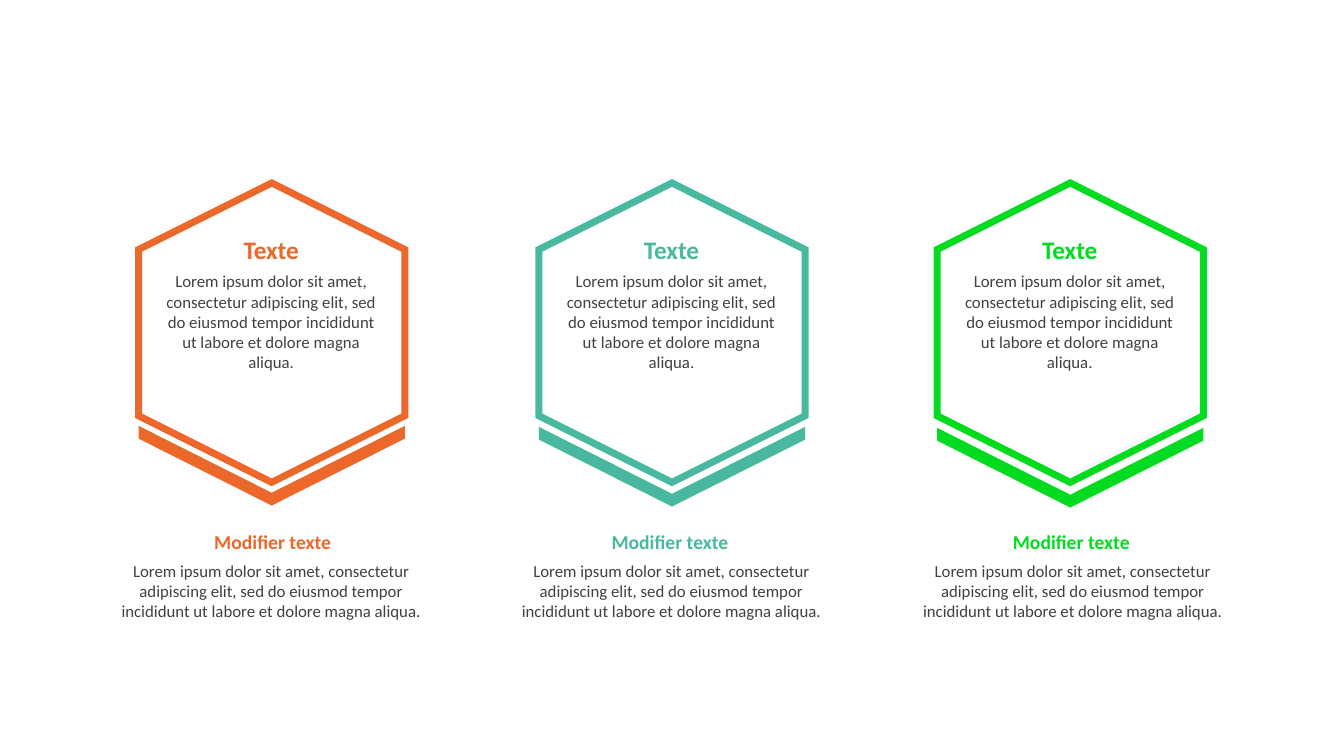
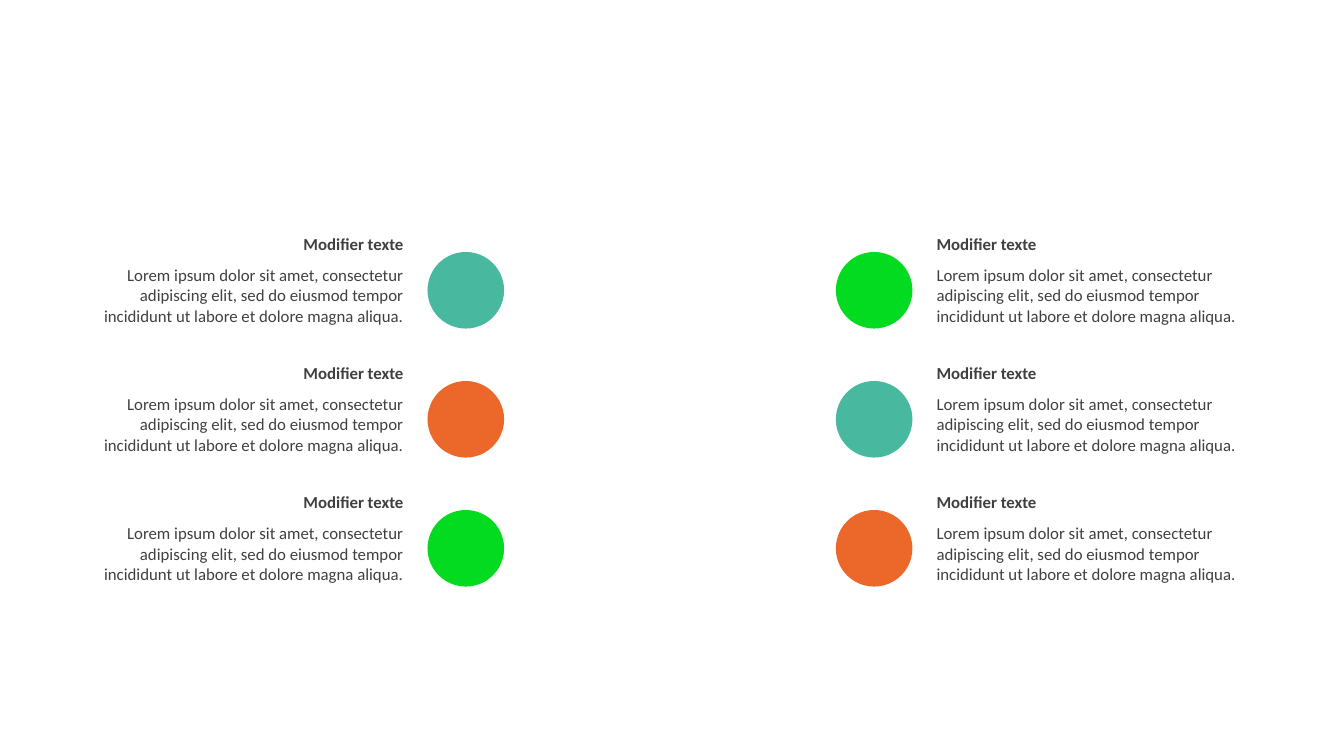
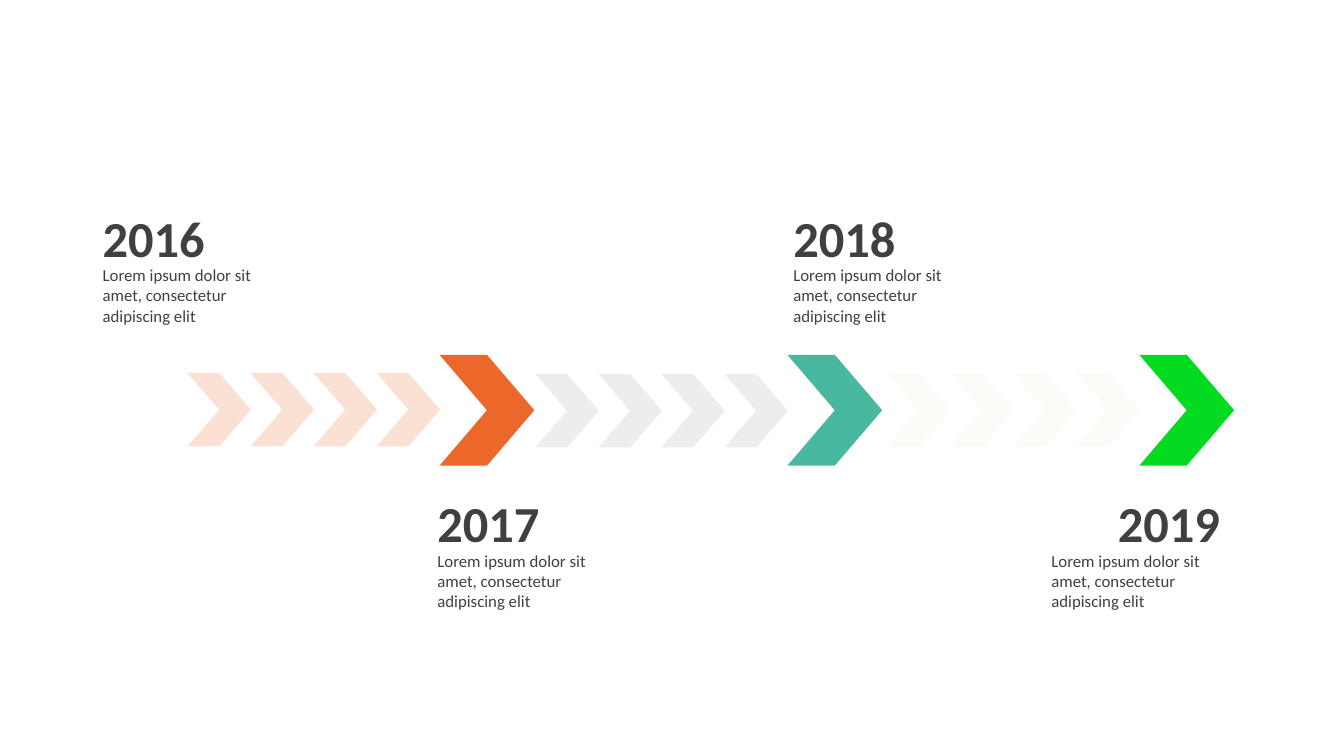
from dataclasses import dataclass
from lxml import etree
from pptx import Presentation
from pptx.dml import color
from pptx.enum import shapes, text
from pptx.oxml import ns
from pptx.util import Inches, Pt


@dataclass(frozen=True)
class Theme:
    font: str = "Calibri"
    ink: str = "404040"
    orange: str = "EC672A"
    teal: str = "48B89E"
    green: str = "03DB21"
    grey: str = "EDEDED"
    pale: str = "E2F0D9"
    body: int = 12
    label: int = 14
    head: int = 18
    year: int = 36
    stroke: int = 5


THEME = Theme()
KIND = shapes.MSO_SHAPE
LEFT, MID, RIGHT = text.PP_ALIGN.LEFT, text.PP_ALIGN.CENTER, text.PP_ALIGN.RIGHT
SHORT = "Lorem ipsum dolor sit amet, consectetur adipiscing elit"
LONG = SHORT + ", sed do eiusmod tempor incididunt ut labore et dolore magna aliqua."
LABEL = "Modifier texte"


def rgb(tone):
    return color.RGBColor.from_string(tone)


def add_text(slide, box, words, size=THEME.body, tone=THEME.ink,
             bold=False, align=LEFT, anchor=text.MSO_ANCHOR.TOP):
    frame = slide.shapes.add_textbox(*map(Inches, box)).text_frame
    frame.word_wrap = True
    frame.auto_size = text.MSO_AUTO_SIZE.SHAPE_TO_FIT_TEXT
    frame.vertical_anchor = anchor
    para = frame.paragraphs[0]
    para.text = words
    para.alignment = align
    font = para.font
    font.name, font.size, font.bold = THEME.font, Pt(size), bold
    font.color.rgb = rgb(tone)


def add_form(slide, kind, box, turn=0):
    form = slide.shapes.add_shape(kind, *map(Inches, box))
    form.shadow.inherit = False
    form.rotation = turn
    return form


def add_solid(slide, kind, box, tone, turn=0, alpha=100):
    form = add_form(slide, kind, box, turn)
    form.line.fill.background()
    form.fill.solid()
    form.fill.fore_color.rgb = rgb(tone)
    if alpha < 100:
        node = form.fill._xPr.find(".//" + ns.qn("a:srgbClr"))
        etree.SubElement(node, ns.qn("a:alpha"), val=str(alpha * 1000))
    return form


def add_frame(slide, box, tone):
    form = add_form(slide, KIND.HEXAGON, box, 270)
    form.fill.background()
    form.line.color.rgb = rgb(tone)
    form.line.width = Pt(THEME.stroke)
    etree.SubElement(form.line._ln, ns.qn("a:miter"), lim="800000")


def add_badge(slide, left, tone, lift):
    add_frame(slide, (left, 1.98, 2.97, 2.64), tone)
    add_text(slide, (left + 0.34, 2.64, 2.28, 1.11), LONG, align=MID)
    add_text(slide, (left + 0.34, 2.28, 2.28, 0.4), "Texte",
             THEME.head, tone, True, MID)
    fold = add_solid(slide, KIND.CHEVRON, (left + 1.09, lift, 0.79, 2.64), tone, 90)
    fold.adjustments[0] = 0.84


def add_note(slide, left, head, tone):
    add_text(slide, (left, 5.51, 3.48, 0.71), LONG, align=MID)
    add_text(slide, (head, 5.21, 3.45, 0.34), LABEL, THEME.label, tone, True, MID)


def add_point(slide, top, dot, left, width, tone, align):
    add_solid(slide, KIND.OVAL, (dot, top, 0.76, 0.76), tone)
    add_text(slide, (left, top + 0.08, width, 0.71), LONG, align=align)
    add_text(slide, (left, top - 0.23, width, 0.3), LABEL, bold=True, align=align)


def add_trail(slide, left, top, tone, alpha, tip):
    for step in range(4):
        box = (left + step * 0.625, top, 0.63, 0.73)
        add_solid(slide, KIND.CHEVRON, box, tone, alpha=alpha)
    add_solid(slide, KIND.CHEVRON, (left + 2.5, 3.52, 0.94, 1.1), tip)


def add_year(slide, left, top, year, align):
    add_text(slide, (left, top, 1.87, 0.71), year, THEME.year, bold=True,
             align=align, anchor=text.MSO_ANCHOR.MIDDLE)
    add_text(slide, (left, top + 0.58, 1.87, 0.71), SHORT)


def draw_badges(slide):
    for left, lift, note, head, tone in (
        (1.21, 3.3, 0.95, 0.98, THEME.orange),
        (5.18, 3.31, 4.92, 4.92, THEME.teal),
        (9.13, 3.32, 8.9, 8.9, THEME.green),
    ):
        add_badge(slide, left, tone, lift)
        add_note(slide, note, head, tone)


def draw_points(slide):
    tones = (THEME.green, THEME.teal, THEME.orange)
    for row in range(3):
        top = 2.5 + row * 1.28
        add_point(slide, top, 4.24, 0.69, 3.41, tones[(row + 1) % 3], RIGHT)
        add_point(slide, top, 8.29, 9.19, 3.45, tones[row], LEFT)


def draw_years(slide):
    add_trail(slide, 1.86, 3.7, THEME.orange, 20, THEME.orange)
    add_trail(slide, 5.31, 3.71, THEME.grey, 100, THEME.teal)
    add_trail(slide, 8.8, 3.7, THEME.pale, 20, THEME.green)
    for left, top, year, align in (
        (0.92, 2, "2016", LEFT),
        (4.24, 4.83, "2017", LEFT),
        (7.77, 2, "2018", LEFT),
        (10.33, 4.83, "2019", RIGHT),
    ):
        add_year(slide, left, top, year, align)


def main():
    deck = Presentation()
    deck.slide_width, deck.slide_height = Inches(13.33), Inches(7.5)
    for draw in (draw_badges, draw_points, draw_years):
        draw(deck.slides.add_slide(deck.slide_layouts[6]))
    deck.save("out.pptx")


if __name__ == "__main__":
    main()
